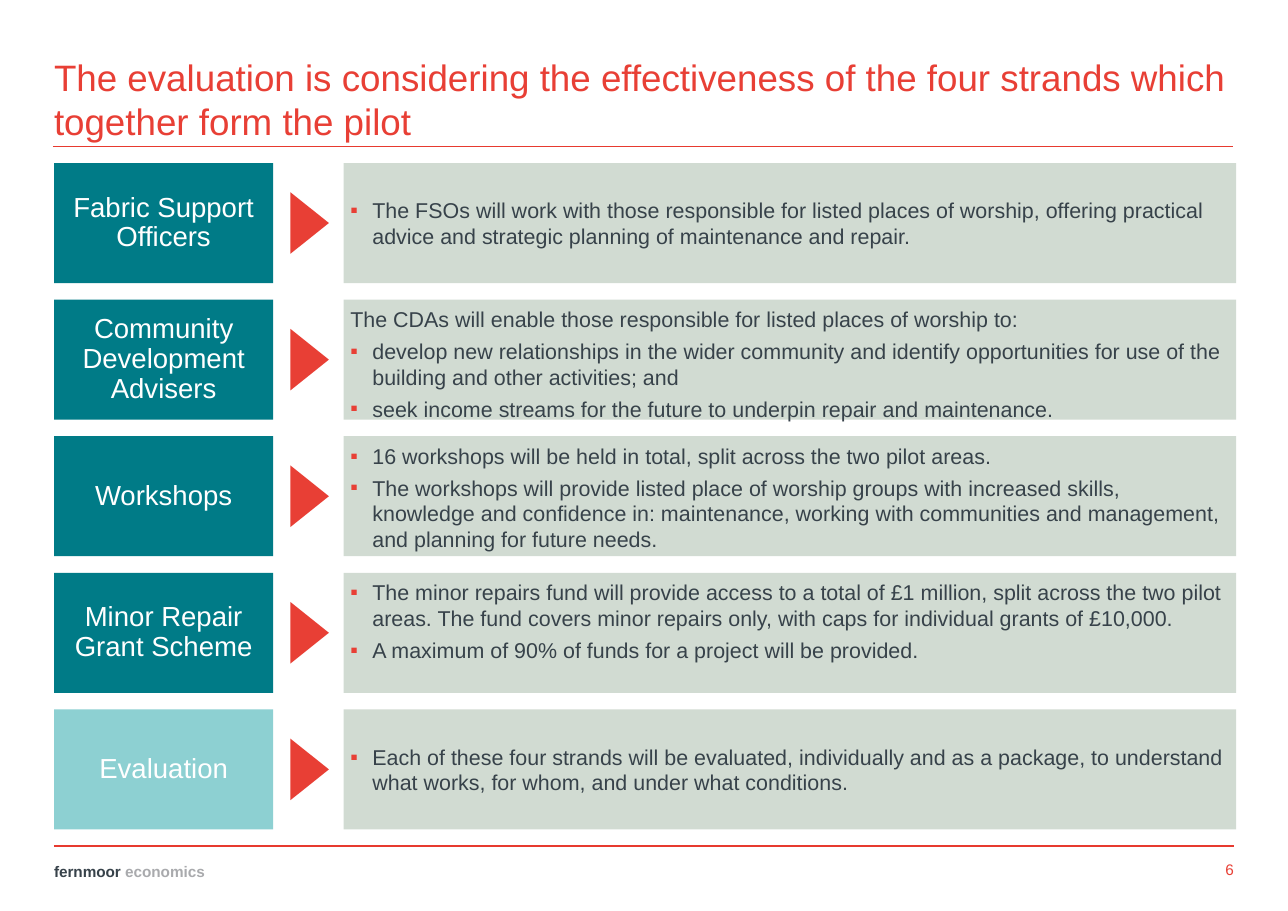
from lxml.etree import SubElement
from pptx import Presentation
from pptx.dml.color import RGBColor
from pptx.enum.shapes import MSO_CONNECTOR, MSO_SHAPE
from pptx.enum.text import MSO_ANCHOR, MSO_AUTO_SIZE, PP_ALIGN
from pptx.oxml.ns import qn
from pptx.util import Inches, Pt

RED, RULE_RED, TEAL, PALE_TEAL = "E83F35", "E73A2F", "007B87", "8DD0D2"
SAGE, SLATE, GREY, WHITE = "D1DBD2", "37424A", "A9AAAD", "FFFFFF"
BULLET = "▪"
ROW_TOP, ROW_PITCH, ROW_HEIGHT = 1.48, 1.24, 1.09
LEFT = 0.49

STRANDS = [
    ("Fabric Support Officers", TEAL, MSO_ANCHOR.MIDDLE, [
        (True, "The FSOs will work with those responsible for listed places of worship, "
               "offering practical advice and strategic planning of maintenance and repair."),
    ]),
    ("Community Development Advisers", TEAL, MSO_ANCHOR.TOP, [
        (False, "The CDAs will enable those responsible for listed places of worship to:"),
        (True, "develop new relationships in the wider community and identify opportunities "
               "for use of the building and other activities; and"),
        (True, "seek income streams for the future to underpin repair and maintenance."),
    ]),
    ("Workshops", TEAL, MSO_ANCHOR.TOP, [
        (True, "16 workshops will be held in total, split across the two pilot areas."),
        (True, "The workshops will provide listed place of worship groups with increased "
               "skills, knowledge and confidence in: maintenance, working with communities "
               "and management, and planning for future needs."),
    ]),
    ("Minor Repair Grant Scheme", TEAL, MSO_ANCHOR.TOP, [
        (True, "The minor repairs fund will provide access to a total of £1 million, split "
               "across the two pilot areas. The fund covers minor repairs only, with caps "
               "for individual grants of £10,000."),
        (True, "A maximum of 90% of funds for a project will be provided."),
    ]),
    ("Evaluation", PALE_TEAL, MSO_ANCHOR.MIDDLE, [
        (True, "Each of these four strands will be evaluated, individually and as a package, "
               "to understand what works, for whom, and under what conditions."),
    ]),
]


def color(value):
    return RGBColor.from_string(value)


class SlideBuilder:
    font_name = "Arial"

    def __init__(self, slide):
        self.slide = slide

    def format_run(self, run, size, value, bold=False):
        run.font.name = self.font_name
        run.font.size = Pt(size)
        run.font.bold = bold
        run.font.color.rgb = color(value)

    def format_frame(self, text_frame, anchor, margin=0, wrap=True):
        text_frame.auto_size = MSO_AUTO_SIZE.NONE
        text_frame.word_wrap = wrap
        text_frame.vertical_anchor = anchor
        text_frame.margin_left = text_frame.margin_right = Inches(margin)
        text_frame.margin_top = text_frame.margin_bottom = Inches(margin)

    def format_paragraph(self, paragraph, alignment):
        paragraph.alignment = alignment
        paragraph.space_before = paragraph.space_after = Pt(2)

    def title(self, text, left, top, width, height):
        shape = self.slide.shapes.title
        shape.left, shape.top = Inches(left), Inches(top)
        shape.width, shape.height = Inches(width), Inches(height)
        shape.text_frame.text = text
        self.format_frame(shape.text_frame, MSO_ANCHOR.MIDDLE)
        paragraph = shape.text_frame.paragraphs[0]
        paragraph.alignment = PP_ALIGN.LEFT
        self.format_run(paragraph.runs[0], 24, RED)

    def rule(self, left, top, width):
        connector = self.slide.shapes.add_connector(
            MSO_CONNECTOR.STRAIGHT, Inches(left), Inches(top), Inches(left + width), Inches(top))
        connector.line.color.rgb = color(RULE_RED)
        connector.line.width = Pt(1)
        SubElement(connector._element.spPr, qn("a:effectLst"))

    def footer(self, pieces, left, top, width, alignment):
        shape = self.slide.shapes.add_textbox(
            Inches(left), Inches(top), Inches(width), Inches(0.2))
        self.format_frame(shape.text_frame, MSO_ANCHOR.BOTTOM, wrap=False)
        paragraph = shape.text_frame.paragraphs[0]
        self.format_paragraph(paragraph, alignment)
        for text, value, bold in pieces:
            run = paragraph.add_run()
            run.text = text
            self.format_run(run, 10, value, bold)

    def block(self, group, kind, left, top, width, height, fill):
        shape = group.shapes.add_shape(
            kind, Inches(left), Inches(top), Inches(width), Inches(height))
        shape.shadow.inherit = False
        shape.fill.solid()
        shape.fill.fore_color.rgb = color(fill)
        shape.line.fill.background()
        return shape

    def label(self, group, text, top, fill):
        shape = self.block(group, MSO_SHAPE.RECTANGLE, LEFT, top, 1.99, ROW_HEIGHT, fill)
        shape.text_frame.text = text
        self.format_frame(shape.text_frame, MSO_ANCHOR.MIDDLE)
        paragraph = shape.text_frame.paragraphs[0]
        self.format_paragraph(paragraph, PP_ALIGN.CENTER)
        paragraph.line_spacing = 0.9
        self.format_run(paragraph.runs[0], 18, WHITE)

    def arrow(self, group, top):
        width, height = 0.56, 0.35
        shape = self.block(group, MSO_SHAPE.ISOSCELES_TRIANGLE, 2.81 - width / 2,
                           top + (ROW_HEIGHT - height) / 2, width, height, RED)
        shape.rotation = 90

    def bullet(self, paragraph):
        properties = paragraph._p.get_or_add_pPr()
        properties.set("marL", str(Inches(0.2)))
        properties.set("indent", str(Inches(-0.2)))
        bullet_color = SubElement(properties, qn("a:buClr"))
        SubElement(bullet_color, qn("a:srgbClr"), val=RED)
        SubElement(properties, qn("a:buFont"), typeface=self.font_name)
        SubElement(properties, qn("a:buChar"), char=BULLET)

    def description(self, group, items, top, anchor):
        shape = self.block(group, MSO_SHAPE.RECTANGLE, 3.12, top, 8.1, ROW_HEIGHT, SAGE)
        text_frame = shape.text_frame
        text_frame.text = "\n".join(text for _, text in items)
        self.format_frame(text_frame, anchor, margin=0.06)
        for paragraph, (bulleted, _) in zip(text_frame.paragraphs, items):
            self.format_paragraph(paragraph, PP_ALIGN.LEFT)
            self.format_run(paragraph.runs[0], 14, SLATE)
            if bulleted:
                self.bullet(paragraph)

    def strand(self, name, fill, anchor, items, top):
        group = self.slide.shapes.add_group_shape()
        self.label(group, name, top, fill)
        self.arrow(group, top)
        self.description(group, items, top, anchor)


def main():
    presentation = Presentation()
    presentation.slide_width = Inches(11.69)
    presentation.slide_height = Inches(8.27)
    slide = presentation.slides.add_slide(presentation.slide_layouts[5])
    builder = SlideBuilder(slide)

    builder.title("The evaluation is considering the effectiveness of the four strands "
                  "which together form the pilot", LEFT, 0.47, 10.7, 0.85)
    builder.rule(0.48, 1.33, 10.71)
    for row, (name, fill, anchor, items) in enumerate(STRANDS):
        builder.strand(name, fill, anchor, items, ROW_TOP + row * ROW_PITCH)
    builder.rule(LEFT, 7.68, 10.71)
    builder.footer([("fernmoor ", SLATE, True), ("economics", GREY, True)],
                   LEFT, 7.79, 1.38, PP_ALIGN.LEFT)
    builder.footer([("6", RED, False)], 10.9, 7.78, 0.3, PP_ALIGN.RIGHT)

    presentation.save("out.pptx")


if __name__ == "__main__":
    main()
